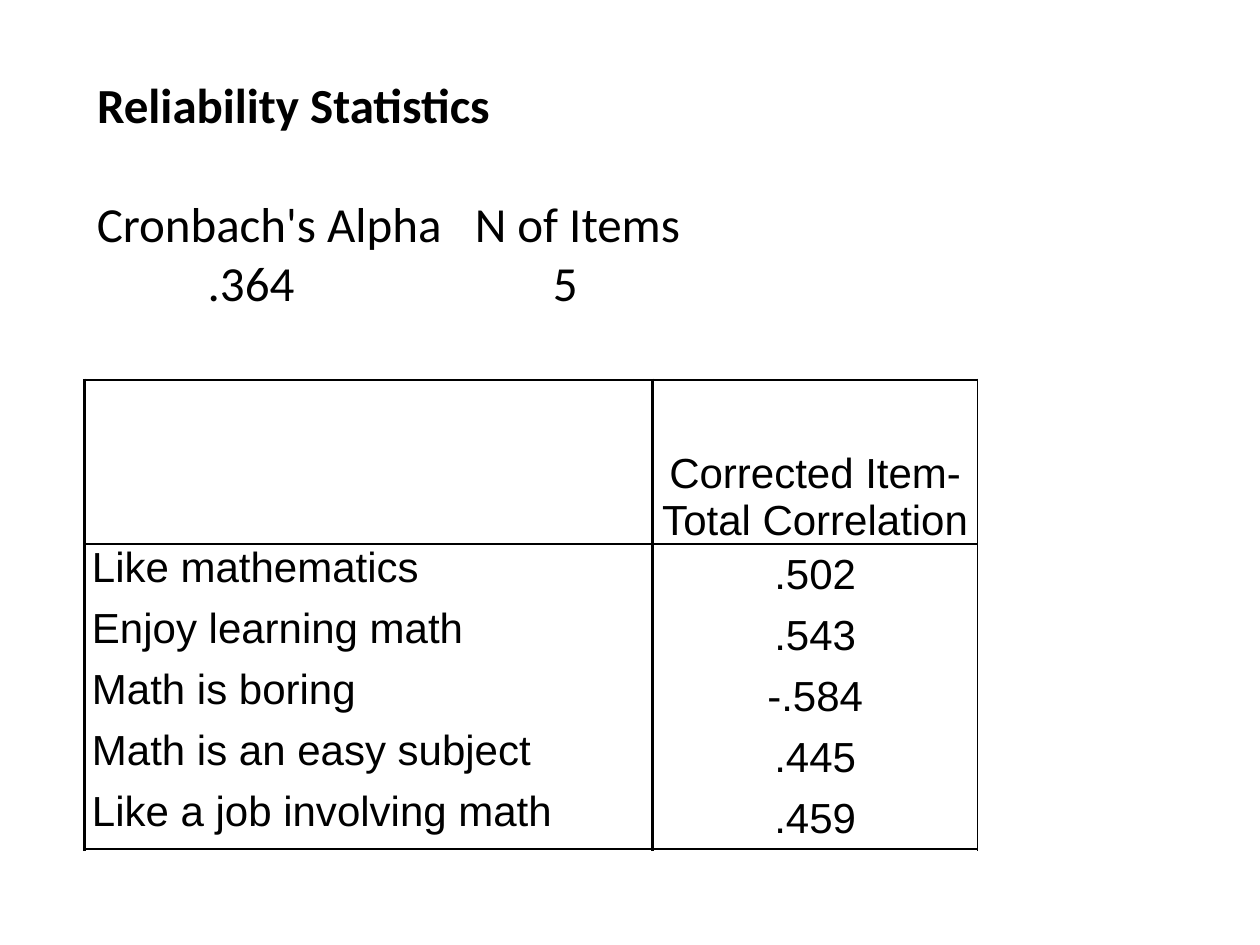
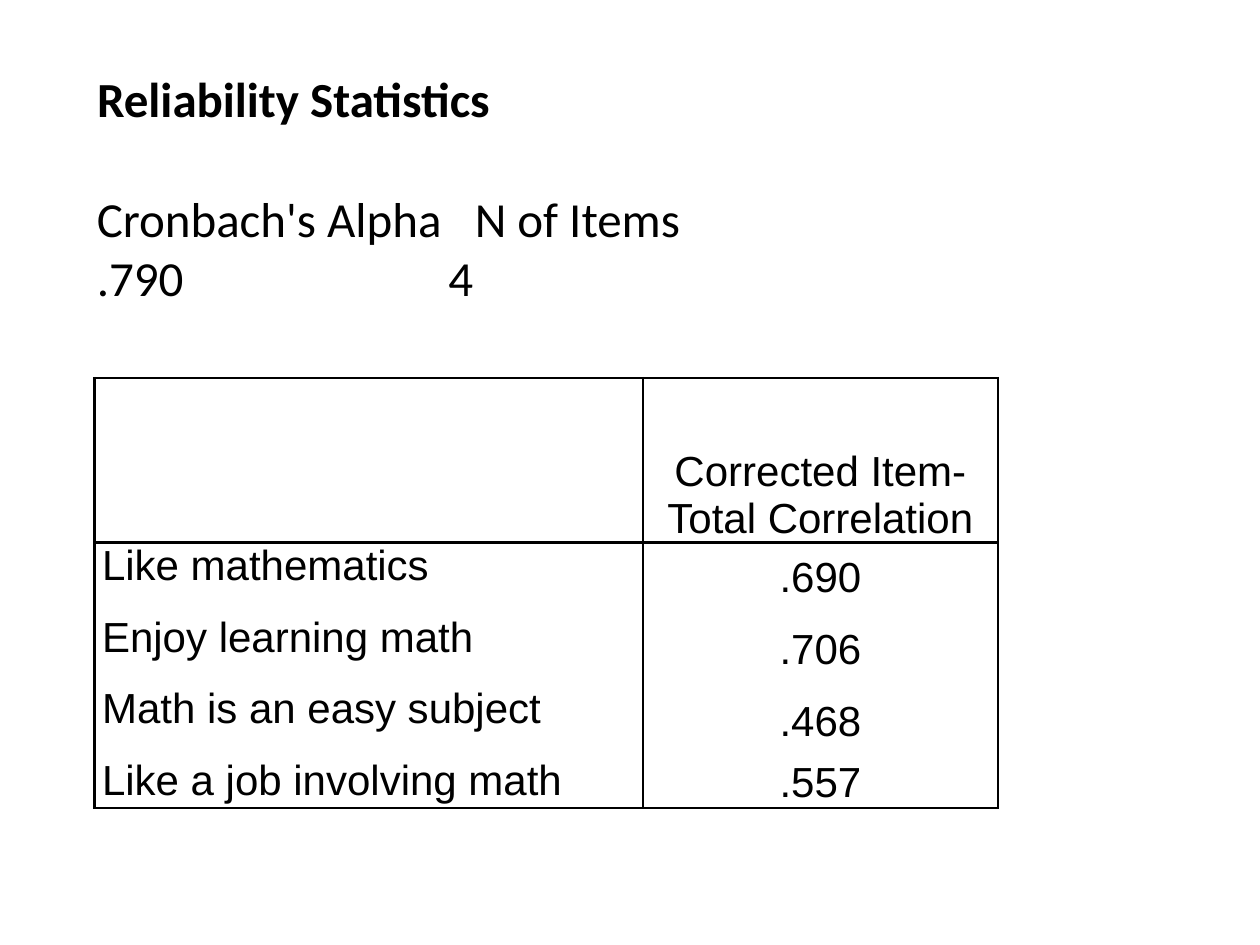
from dataclasses import dataclass

from lxml.etree import SubElement
from pptx import Presentation
from pptx.dml.color import RGBColor
from pptx.enum.text import MSO_ANCHOR as Anchor, MSO_AUTO_SIZE as AutoSize, PP_ALIGN as Align
from pptx.oxml.ns import qn
from pptx.util import Inches, Pt

COLORS = {"ink": "000000", "paper": "FFFFFF"}
HEADING_FONT, TABLE_FONT = "Calibri", "Arial"
HEADING_SIZE, TABLE_SIZE = 28, 24
SLIDE_WIDTH, SLIDE_HEIGHT = Inches(10), Inches(7.5)
COLUMN, ROW = SLIDE_WIDTH // 100, SLIDE_HEIGHT // 100
TITLE_ROWS, STATISTICS_OFFSET, STATISTICS_ROWS = 7.6, 12.67, 14
LINE, THIN_LINE = 1.5, 1
TABLE_HEADER = "Corrected Item-Total Correlation"
STATISTICS_LABELS = ("Cronbach's Alpha", "N of Items")
LABEL_STOPS = (0, 30)


@dataclass
class Box:
    left: float
    top: float
    width: float
    height: float

    def place(self):
        return (round(self.left * COLUMN), round(self.top * ROW),
                round(self.width * COLUMN), round(self.height * ROW))


def add_run(paragraph, text, font, size, bold=False):
    run = paragraph.add_run()
    run.text = text
    run.font.name = font
    run.font.size = Pt(size)
    run.font.bold = bold
    run.font.color.rgb = RGBColor.from_string(COLORS["ink"])


def add_title(slide, box, text):
    title = slide.shapes.title
    title.left, title.top, title.width, title.height = box.place()
    frame = title.text_frame
    frame.auto_size = AutoSize.NONE
    frame.vertical_anchor = Anchor.TOP
    frame.paragraphs[0].alignment = Align.LEFT
    add_run(frame.paragraphs[0], text, HEADING_FONT, HEADING_SIZE, bold=True)


def add_tabbed_line(paragraph, texts, stops):
    tab_list = SubElement(paragraph._p.get_or_add_pPr(), qn("a:tabLst"))
    for stop in filter(None, stops):
        SubElement(tab_list, qn("a:tab"), pos=str(round(stop * COLUMN)), algn="l")
    line = "".join(("\t" if stop else "") + text for text, stop in zip(texts, stops))
    add_run(paragraph, line, HEADING_FONT, HEADING_SIZE)


def add_statistics(slide, box, values, value_stops):
    frame = slide.shapes.add_textbox(*box.place()).text_frame
    frame.word_wrap = True
    add_tabbed_line(frame.paragraphs[0], STATISTICS_LABELS, LABEL_STOPS)
    add_tabbed_line(frame.add_paragraph(), values, value_stops)


def set_borders(cell, widths):
    properties = cell._tc.get_or_add_tcPr()
    for side in "LRTB":
        width = widths.get(side)
        line = SubElement(properties, qn(f"a:ln{side}"), w=str(Pt(width or 0)))
        if width:
            fill = SubElement(line, qn("a:solidFill"))
            SubElement(fill, qn("a:srgbClr"), val=COLORS["ink"])
        else:
            SubElement(line, qn("a:noFill"))


def format_cell(cell, text, row, column, last_row):
    widths = {"L": LINE, "R": THIN_LINE if column else LINE}
    if row in (0, 1):
        widths["T"] = LINE
    if row in (0, last_row):
        widths["B"] = LINE
    set_borders(cell, widths)
    cell.fill.solid()
    cell.fill.fore_color.rgb = RGBColor.from_string(COLORS["paper"])
    cell.margin_left = cell.margin_right = Inches(0.06)
    cell.margin_top = cell.margin_bottom = 0
    if column:
        cell.vertical_anchor = Anchor.MIDDLE if row else Anchor.BOTTOM
    if text:
        paragraph = cell.text_frame.paragraphs[0]
        paragraph.alignment = Align.CENTER if column else Align.LEFT
        add_run(paragraph, text, TABLE_FONT, TABLE_SIZE)


def add_correlations(slide, box, items, label_share, header_rows, item_rows, last_item_rows):
    entries = [("", TABLE_HEADER), *items]
    left, top, width, height = box.place()
    table = slide.shapes.add_table(len(entries), 2, left, top, width, height).table
    table.first_row = table.horz_banding = False
    table.columns[0].width = round(width * label_share)
    table.columns[1].width = width - table.columns[0].width
    heights = [header_rows] + [item_rows] * (len(items) - 1) + [last_item_rows]
    for row, (entry, rows) in enumerate(zip(entries, heights)):
        table.rows[row].height = round(rows * ROW)
        for column, text in enumerate(entry):
            format_cell(table.cell(row, column), text, row, column, len(items))


def add_reliability_slide(presentation, heading_box, values, value_stops, table_box, items, **grid):
    slide = presentation.slides.add_slide(presentation.slide_layouts[5])
    left, top, width = heading_box.left, heading_box.top, heading_box.width
    add_title(slide, Box(left, top, width, TITLE_ROWS), "Reliability Statistics")
    add_statistics(slide, Box(left, top + STATISTICS_OFFSET, width, STATISTICS_ROWS),
                   values, value_stops)
    add_correlations(slide, table_box, items, **grid)


def main():
    presentation = Presentation()
    presentation.slide_width, presentation.slide_height = SLIDE_WIDTH, SLIDE_HEIGHT
    add_reliability_slide(
        presentation, Box(6.7, 7.2, 56.7, 32.8), (".364", "5"), (8.8, 36.2),
        Box(6.7, 40.2, 70.9, 49.7),
        [("Like mathematics", ".502"), ("Enjoy learning math", ".543"),
         ("Math is boring", "-.584"), ("Math is an easy subject", ".445"),
         ("Like a job involving math", ".459")],
        label_share=0.636, header_rows=17.4, item_rows=6.46, last_item_rows=6.46)
    add_reliability_slide(
        presentation, Box(6.7, 6.6, 50, 32.8), (".790", "4"), (0, 27.9),
        Box(7.5, 40, 71.7, 45.6),
        [("Like mathematics", ".690"), ("Enjoy learning math", ".706"),
         ("Math is an easy subject", ".468"), ("Like a job involving math", ".557")],
        label_share=0.607, header_rows=17.4, item_rows=7.6, last_item_rows=5.2)
    presentation.save("out.pptx")


if __name__ == "__main__":
    main()
